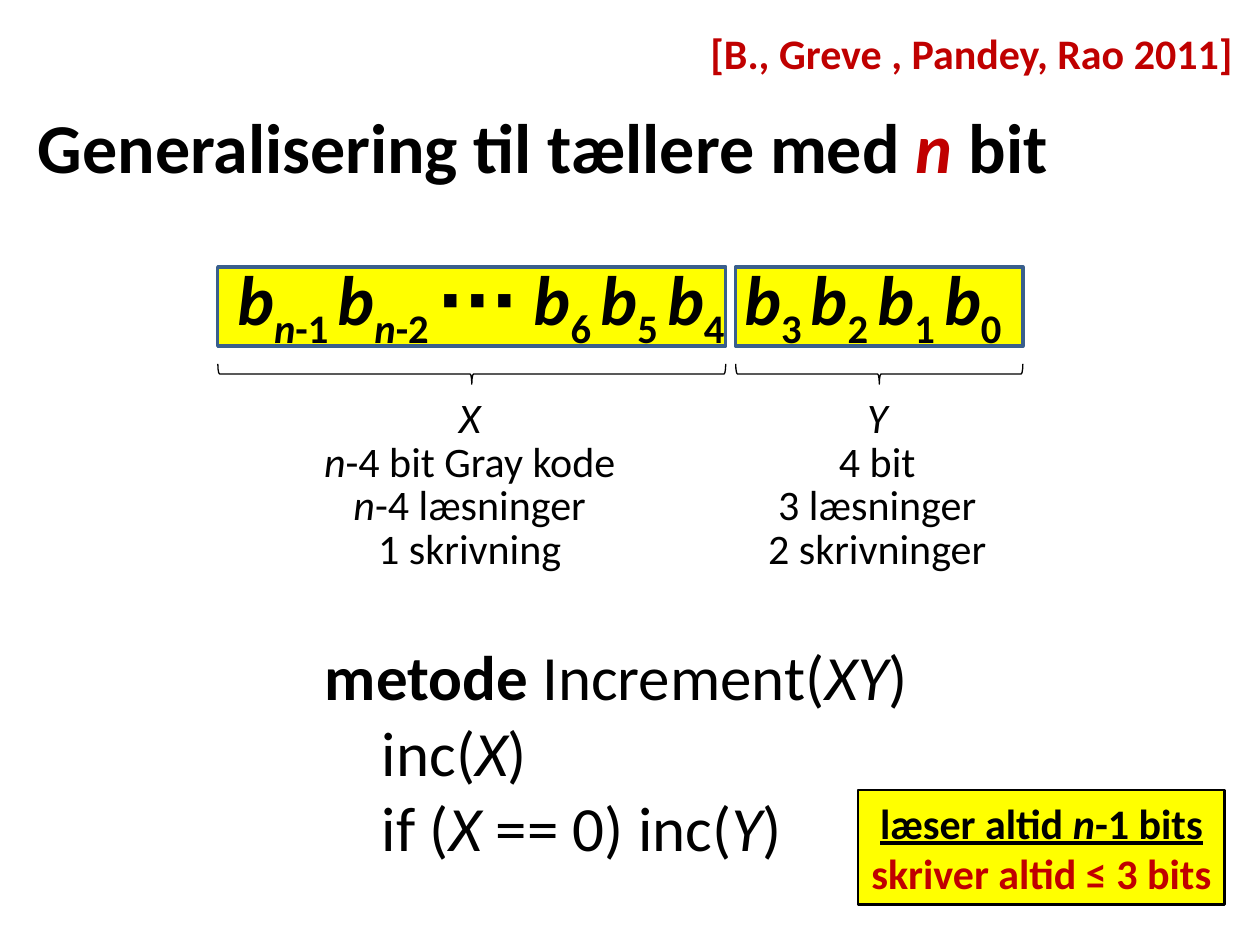
from pptx import Presentation, util as u
from pptx.dml.color import RGBColor
from pptx.enum import shapes, text

BLACK, RED, YELLOW, BLUE = "000000", "C00000", "FFFF00", "3A5F8C"
LEFT, CENTER, RIGHT = text.PP_ALIGN.LEFT, text.PP_ALIGN.CENTER, text.PP_ALIGN.RIGHT


def color(value):
    """Turn a hex string into a colour."""
    return RGBColor.from_string(value)


def lengths(box):
    """Turn a box in centimetres into lengths."""
    return [u.Cm(value) for value in box]


def write(para, runs, size, align=LEFT):
    """Add (text, marks) runs; b bold, i italic, u underline, r red, s subscript, w wide."""
    para.alignment = align
    for words, marks in runs:
        span = para.add_run()
        span.text = words
        font = span.font
        font.name, font.size = "Calibri", u.Pt(size)
        font.bold, font.italic, font.underline = "b" in marks, "i" in marks, "u" in marks
        font.color.rgb = color(RED if "r" in marks else BLACK)
        if "s" in marks:
            span._r.get_or_add_rPr().set("baseline", "-25000")
        if "w" in marks:
            span._r.get_or_add_rPr().set("spc", "300")


def fill_text(frame, lines, size, align=LEFT):
    """Write one paragraph per line and return the paragraphs."""
    frame.word_wrap = True
    for number, runs in enumerate(lines):
        para = frame.add_paragraph() if number else frame.paragraphs[0]
        write(para, runs, size, align)
    return frame.paragraphs


def add_text(page, box, lines, size, align=LEFT):
    """Add a text box and return its paragraphs."""
    return fill_text(page.shapes.add_textbox(*lengths(box)).text_frame, lines, size, align)


def add_shape(page, kind, box, line, width, fill=None):
    """Add a preset shape without a shadow."""
    shape = page.shapes.add_shape(kind, *lengths(box))
    shape.shadow.inherit = False
    if fill:
        shape.fill.solid()
        shape.fill.fore_color.rgb = color(fill)
    else:
        shape.fill.background()
    shape.line.color.rgb = color(line)
    shape.line.width = u.Pt(width)
    return shape


def add_title(page, box, runs):
    """Place and write the title placeholder."""
    title = page.shapes.title
    title.left, title.top, title.width, title.height = lengths(box)
    frame = title.text_frame
    frame.auto_size = text.MSO_AUTO_SIZE.NONE
    frame.vertical_anchor = text.MSO_ANCHOR.TOP
    fill_text(frame, [runs], 40)


def add_half(page, box, lines):
    """Add one part of the counter with its brace and description below."""
    left, top, width, height = box
    add_shape(page, shapes.MSO_SHAPE.RECTANGLE, box, BLUE, 2, YELLOW)
    depth = 0.41
    middle = left + width / 2
    brace_box = (middle - depth / 2, top + height + 0.56 - width / 2, depth, width)
    brace = add_shape(page, shapes.MSO_SHAPE.RIGHT_BRACE, brace_box, BLACK, 0.75)
    brace.rotation = 90
    for para in add_text(page, (left - 0.04, top + 2.52, width, 3.81), lines, 24, CENTER):
        para.line_spacing = u.Pt(25)


def add_bits(page, box):
    """Write the row of bits, from the highest to the lowest."""
    runs = []
    for offset in ("-1 ", "-2 "):
        runs += [("b", "bi"), ("n", "bis"), (offset, "bs")]
    runs.append(("∙∙∙ ", "b"))
    for index in range(6, -1, -1):
        label = f"{index} " if index else "0"
        runs += [("b", "bi"), (label, "bsw" if index == 4 else "bs")]
    add_text(page, box, [runs], 40, CENTER)


def add_method(page, box):
    """Write the increment method with an indented body."""
    lines = [
        [("metode ", "b"), ("Increment(", ""), ("XY", "i"), (")", "")],
        [("inc(", ""), ("X", "i"), (")", "")],
        [("if (", ""), ("X", "i"), (" == 0) inc(", ""), ("Y", "i"), (")", "")],
    ]
    for para in add_text(page, box, lines, 36)[1:]:
        para._p.get_or_add_pPr().set("marL", str(u.Cm(1.15)))


def add_result(page, box):
    """Add the framed result."""
    note = add_shape(page, shapes.MSO_SHAPE.RECTANGLE, box, BLACK, 1.5, YELLOW)
    lines = [
        [("læser altid ", "bu"), ("n", "biu"), ("-1 bits", "bu")],
        [("skriver altid ≤ 3 bits", "br")],
    ]
    fill_text(note.text_frame, lines, 24, CENTER)


def main():
    """Build and save the deck."""
    deck = Presentation()
    deck.slide_width, deck.slide_height = u.Cm(25.4), u.Cm(19.05)
    page = deck.slides.add_slide(deck.slide_layouts[5])
    add_title(page, (0.51, 1.96, 23.01, 1.96),
              [("Generalisering til tællere med ", "b"), ("n", "bir"), (" bit", "b")])
    add_half(page, (4.39, 5.38, 10.24, 1.6), [
        [("X", "i")],
        [("n", "i"), ("-4 bit Gray kode", "")],
        [("n", "i"), ("-4 læsninger", "")],
        [("1 skrivning", "")],
    ])
    add_half(page, (14.83, 5.38, 5.79, 1.6), [
        [("Y", "i")], [("4 bit", "")], [("3 læsninger", "")], [("2 skrivninger", "")],
    ])
    add_bits(page, (1.78, 5.03, 21.41, 1.96))
    add_method(page, (6.3, 12.73, 16.21, 4.88))
    add_result(page, (17.3, 15.93, 7.39, 2.31))
    add_text(page, (8.89, 0.43, 16.21, 1.27),
             [[("[B., Greve , Pandey, Rao 2011]", "br")]], 24, RIGHT)
    deck.save("out.pptx")


if __name__ == "__main__":
    main()
